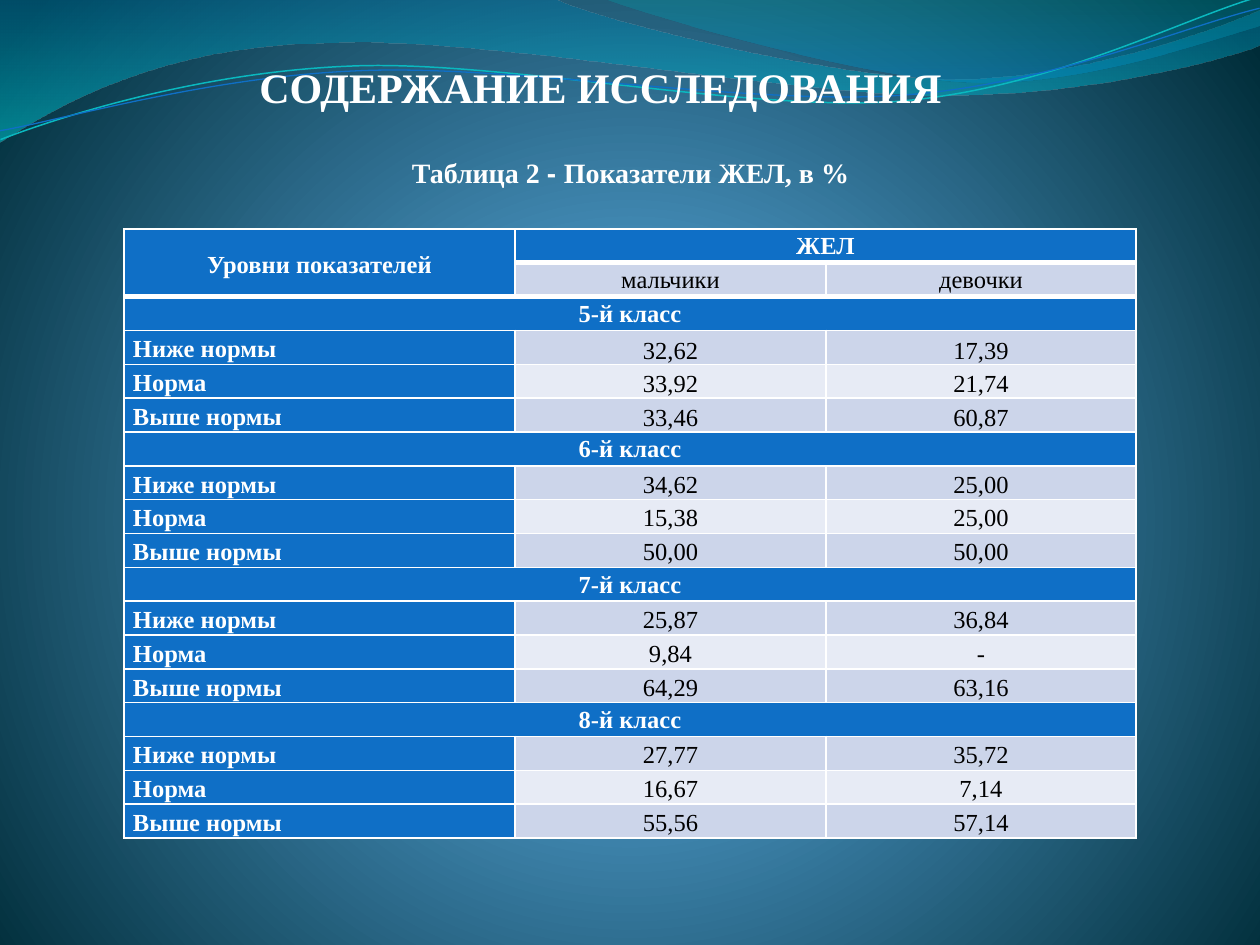
from dataclasses import dataclass
from typing import Optional

import pptx
import pptx.dml.color
import pptx.enum.text
import pptx.oxml
import pptx.oxml.ns
import pptx.util

RGBColor = pptx.dml.color.RGBColor
PP_ALIGN = pptx.enum.text.PP_ALIGN
ANCHOR = pptx.enum.text.MSO_ANCHOR

PX = 914400 / 126  # EMU in one px
SERIF = "Times New Roman"
WHITE = RGBColor(0xFF, 0xFF, 0xFF)
BLACK = RGBColor(0x00, 0x00, 0x00)
BLUE = RGBColor(0x0F, 0x6F, 0xC6)
CYAN = RGBColor(0x0A, 0xB8, 0xBF)
BAND_DARK = RGBColor(0xCC, 0xD5, 0xEA)
BAND_LIGHT = RGBColor(0xE7, 0xEB, 0xF5)
SKY = RGBColor(0x4A, 0xA0, 0xD6)
STEEL = RGBColor(0x4C, 0x98, 0xC7)
NIGHT = RGBColor(0x00, 0x2C, 0x38)
DEEP_BLUE = RGBColor(0x00, 0x74, 0xA1)
TEAL = RGBColor(0x00, 0xC6, 0xCF)
DARK_TEAL = RGBColor(0x00, 0xA1, 0xA9)
OCEAN = RGBColor(0x00, 0x8B, 0xBF)

DOWNWARD = '<a:lin ang="5400000" scaled="0"/>'
RADIAL = ('<a:path path="circle"><a:fillToRect l="10000" t="110000" '
          'r="10000" b="100000"/></a:path>')


@dataclass
class Stop:
    pos: int
    color: RGBColor
    alpha: int = 100


@dataclass
class Wave:
    # A step of 2 numbers is a straight line, of 6 a Bezier curve
    steps: list[tuple[int, ...]]
    stops: Optional[list[Stop]] = None
    color: Optional[RGBColor] = None
    width: float = 0
    rotation: float = 0


@dataclass
class Grade:
    name: str
    rows: list[tuple[str, str]]  # boys, girls
    anchor: ANCHOR = ANCHOR.MIDDLE


WAVES = [
    Wave([(0, 0), (554, -1), (600, 21, 837, 79, 955, 79), (1075, 79, 1207, 33, 1260, 11),
          (1261, 45), (1239, 55, 1096, 96, 940, 95), (784, 95, 481, 35, 324, 43),
          (163, 45, 58, 105, -1, 142)],
         stops=[Stop(0, DEEP_BLUE, 45), Stop(100, TEAL, 55)]),
    Wave([(604, -1), (641, 14, 859, 78, 969, 82), (1079, 87, 1211, 40, 1260, 26), (1260, 0)],
         stops=[Stop(0, DARK_TEAL, 30), Stop(80, OCEAN, 45)]),
    Wave([(-2, 110), (58, 90, 199, 52, 350, 53), (499, 53, 745, 118, 896, 114),
          (1049, 109, 1184, 45, 1260, 27)], color=CYAN, width=0.85, rotation=357.3),
    Wave([(-2, 101), (57, 94, 207, 57, 357, 58), (509, 58, 750, 112, 902, 108),
          (1052, 104, 1188, 52, 1262, 38)], color=BLUE, width=0.75, rotation=357.3),
]
LEVELS = ["Ниже нормы", "Норма", "Выше нормы"]
GRADES = [
    Grade("5-й класс", [("32,62", "17,39"), ("33,92", "21,74"), ("33,46", "60,87")],
          ANCHOR.BOTTOM),
    Grade("6-й класс", [("34,62", "25,00"), ("15,38", "25,00"), ("50,00", "50,00")]),
    Grade("7-й класс", [("25,87", "36,84"), ("9,84", "-"), ("64,29", "63,16")]),
    Grade("8-й класс", [("27,77", "35,72"), ("16,67", "7,14"), ("55,56", "57,14")]),
]


def px(n: float) -> int:
    return round(n * PX)


def set_gradient(fill, owner, stops: list[Stop], direction: str) -> None:
    fill.gradient()
    old = next(owner.iter(pptx.oxml.ns.qn("a:gradFill")))
    marks = "".join(
        f'<a:gs pos="{s.pos * 1000}"><a:srgbClr val="{s.color}">'
        f'<a:alpha val="{s.alpha * 1000}"/></a:srgbClr></a:gs>' for s in stops)
    new = pptx.oxml.parse_xml(
        f'<a:gradFill {pptx.oxml.ns.nsdecls("a")} rotWithShape="1">'
        f'<a:gsLst>{marks}</a:gsLst>{direction}</a:gradFill>')
    old.getparent().replace(old, new)


def bend(sp, steps: list[tuple[int, ...]]) -> None:
    """Join the three segments of each curved step into one Bezier segment."""
    segments = iter(list(sp._element.iter(pptx.oxml.ns.qn("a:lnTo"))))
    for step in steps[1:]:
        first, *others = [next(segments) for _ in range(len(step) // 2)]
        if not others:
            continue
        curve = pptx.oxml.parse_xml(f'<a:cubicBezTo {pptx.oxml.ns.nsdecls("a")}/>')
        first.addprevious(curve)
        for segment in (first, *others):
            curve.append(segment[0])
            segment.getparent().remove(segment)


def draw_wave(s, wave: Wave) -> None:
    points = [(px(step[i]), px(step[i + 1]))
              for step in wave.steps for i in range(0, len(step), 2)]
    builder = s.shapes.build_freeform(*points[0])
    builder.add_line_segments(points[1:], close=wave.stops is not None)
    sp = builder.convert_to_shape()
    bend(sp, wave.steps)
    sp.rotation = wave.rotation
    sp.shadow.inherit = False
    if wave.stops:
        set_gradient(sp.fill, sp._element.spPr, wave.stops, DOWNWARD)
        sp.line.fill.background()
    else:
        sp.fill.background()
        sp.line.color.rgb = wave.color
        sp.line.width = pptx.util.Pt(wave.width)


def style(p, size: int, color: RGBColor, bold: bool, align=PP_ALIGN.CENTER) -> None:
    p.alignment = align
    p.font.name, p.font.size = SERIF, pptx.util.Pt(size)
    p.font.bold, p.font.color.rgb = bold, color


def set_borders(cell, row: int) -> None:
    # The lines below the two header rows are thicker
    widths = {"lnL": 1, "lnR": 1, "lnT": 3 if row in (1, 2) else 1, "lnB": 3 if row < 2 else 1}
    tc_pr = cell._tc.get_or_add_tcPr()
    for tag, width in widths.items():
        tc_pr.append(pptx.oxml.parse_xml(
            f'<a:{tag} {pptx.oxml.ns.nsdecls("a")} w="{width * 12700}"><a:solidFill>'
            f'<a:srgbClr val="{WHITE}"/></a:solidFill></a:{tag}>'))


def put(cell, text: str, fill: RGBColor = BLUE, anchor=ANCHOR.TOP,
        align=PP_ALIGN.CENTER, gap: int = 0) -> None:
    cell.fill.solid()
    cell.fill.fore_color.rgb = fill
    cell.vertical_anchor = anchor
    cell.text = text
    p = cell.text_frame.paragraphs[0]
    header = fill == BLUE
    style(p, 14, WHITE if header else BLACK, header, align)
    p.line_spacing = 1.15
    if gap:
        p.space_before = p.space_after = pptx.util.Pt(gap)


def draw_table(s) -> None:
    count = 2 + len(GRADES) * (1 + len(LEVELS))
    table = s.shapes.add_table(count, 3, px(124), px(229), px(1012), px(609)).table
    for column, width in zip(table.columns, (391, 311, 310)):
        column.width = px(width)
    for row in range(count):
        for col in range(3):
            cell = table.cell(row, col)
            cell.margin_left = cell.margin_right = px(9)
            cell.margin_top = cell.margin_bottom = 0
            set_borders(cell, row)

    # Header
    table.cell(0, 0).merge(table.cell(1, 0))
    table.cell(0, 1).merge(table.cell(0, 2))
    put(table.cell(0, 0), "Уровни показателей", anchor=ANCHOR.MIDDLE)
    put(table.cell(0, 1), "ЖЕЛ")
    put(table.cell(1, 1), "мальчики", BAND_DARK)
    put(table.cell(1, 2), "девочки", BAND_DARK)

    # One block per grade
    row = 2
    for grade in GRADES:
        table.cell(row, 0).merge(table.cell(row, 2))
        put(table.cell(row, 0), grade.name, gap=4)
        for i, (level, values) in enumerate(zip(LEVELS, grade.rows), 1):
            put(table.cell(row + i, 0), level, anchor=ANCHOR.MIDDLE, align=PP_ALIGN.LEFT)
            for col, value in enumerate(values, 1):
                put(table.cell(row + i, col), value,
                    BAND_DARK if i % 2 else BAND_LIGHT, grade.anchor)
        row += 1 + len(LEVELS)


def draw_title(s) -> None:
    sp = s.shapes.title
    s.shapes._spTree.append(sp._element)  # in front of the waves
    sp.left, sp.top, sp.width, sp.height = px(35), px(55), px(1142), px(853)
    tf = sp.text_frame
    tf.text = "СОДЕРЖАНИЕ ИССЛЕДОВАНИЯ"
    tf.auto_size = pptx.enum.text.MSO_AUTO_SIZE.NONE
    tf.vertical_anchor = ANCHOR.TOP
    tf.margin_left, tf.margin_right = 0, px(11)
    tf.margin_top = tf.margin_bottom = px(6)
    style(tf.paragraphs[0], 24, WHITE, True)


def draw_caption(s) -> None:
    tf = s.shapes.add_textbox(px(194), px(149), px(873), px(84)).text_frame
    tf.word_wrap = True
    tf.margin_top = px(7)
    p = tf.paragraphs[0]
    style(p, 16, WHITE, True)
    for text, font in (("Таблица 2 ", SERIF), ("- ", "Arial"), ("Показатели ЖЕЛ, в %", SERIF)):
        r = p.add_run()
        r.text, r.font.name = text, font


def main() -> None:
    prs = pptx.Presentation()
    prs.slide_width, prs.slide_height = px(1260), px(945)
    s = prs.slides.add_slide(prs.slide_layouts[5])
    set_gradient(s.background.fill, s._element,
                 [Stop(0, SKY), Stop(25, STEEL), Stop(100, NIGHT)], RADIAL)
    for wave in WAVES:
        draw_wave(s, wave)
    draw_title(s)
    draw_caption(s)
    draw_table(s)
    prs.save("out.pptx")


if __name__ == "__main__":
    main()
